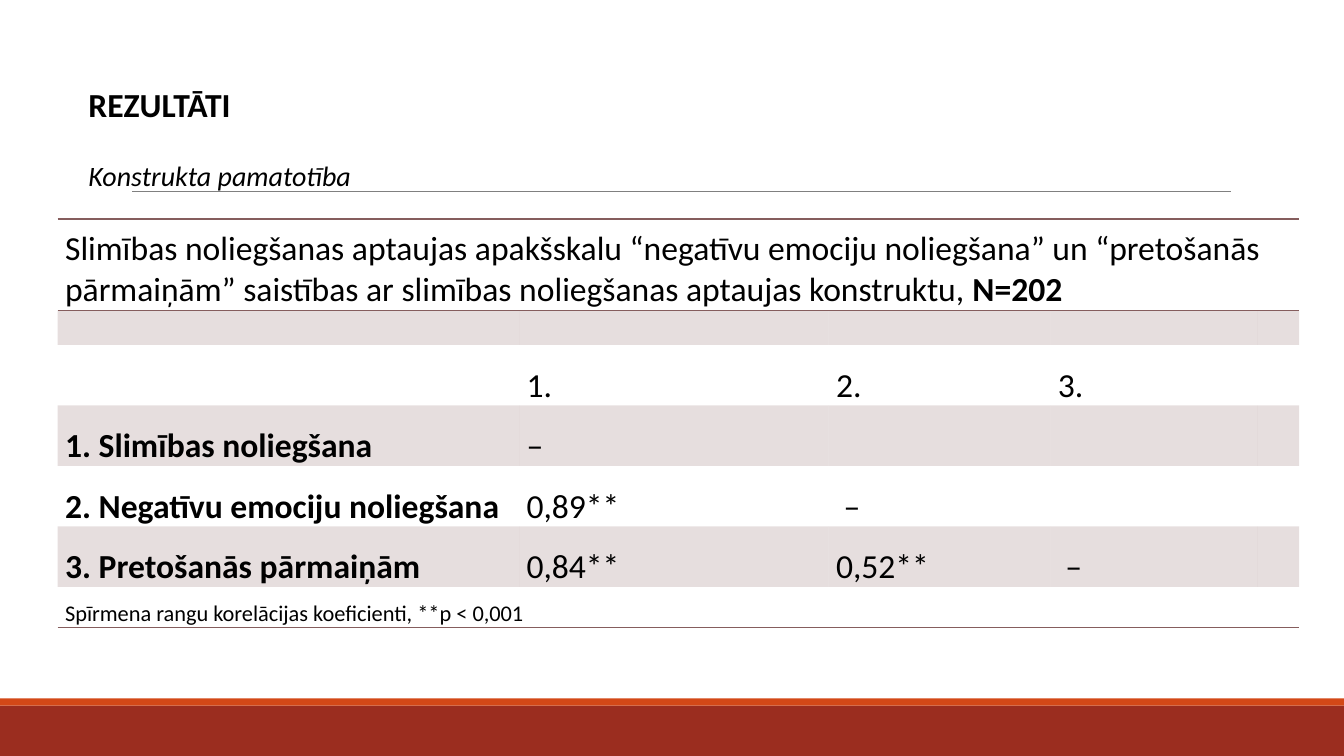
from dataclasses import dataclass

from lxml import etree
from pptx import Presentation
from pptx.dml.color import RGBColor
from pptx.enum.shapes import MSO_CONNECTOR, MSO_SHAPE
from pptx.enum.text import MSO_ANCHOR
from pptx.oxml.ns import qn
from pptx.util import Cm, Pt

RECTANGLE = MSO_SHAPE.RECTANGLE
STRAIGHT = MSO_CONNECTOR.STRAIGHT
BOTTOM = MSO_ANCHOR.BOTTOM

FONT = "Calibri"
COLORS = {
    "text": "000000",
    "rust": "9B2D1F",
    "orange": "D34817",
    "rule": "808080",
    "mauve": "855D5D",
}
PLAIN_TABLE_STYLE = "{2D5ABB26-0587-4C30-8999-92F81FD0307C}"
BAND_OPACITY = 20


@dataclass
class Bar:
    top: float
    height: float
    color: str


@dataclass
class TextLine:
    text: str
    size: int
    bold: bool = False
    italic: bool = False
    space_before: float = 0


BARS = [Bar(17.78, 1.27, "rust"), Bar(17.6, 0.18, "orange")]
TITLE_LINES = [
    TextLine("REZULTĀTI", 24, bold=True),
    TextLine("Konstrukta pamatotība", 20, italic=True, space_before=24.4),
]
COLUMN_WIDTHS = [11.63, 7.8, 5.59, 5.23, 1.04]
ROW_HEIGHTS = [2.31, 0.86, 1.42, 1.42, 1.42, 1.42, 0.94]
CAPTION = (
    "Slimības noliegšanas aptaujas apakšskalu “negatīvu emociju noliegšana” "
    "un “pretošanās pārmaiņām” saistības ar slimības noliegšanas aptaujas konstruktu, "
)
SAMPLE_SIZE = "N=202"
FOOTNOTE = "Spīrmena rangu korelācijas koeficienti, **p < 0,001"
CORRELATIONS = [
    ["", "1.", "2.", "3.", ""],
    ["1. Slimības noliegšana", "–", "", "", ""],
    ["2. Negatīvu emociju noliegšana", "0,89**", " –", "", ""],
    ["3. Pretošanās pārmaiņām", "0,84**", "0,52**", " –", ""],
]
FIRST_DATA_ROW = 2
BANDED_ROWS = (1, 3, 5)


def rgb(name: str) -> RGBColor:
    return RGBColor.from_string(COLORS[name])


def set_font(paragraph, size: float, bold: bool | None = False, italic: bool = False) -> None:
    font = paragraph.font
    font.name, font.size = FONT, Pt(size)
    font.bold, font.italic = bold, italic
    font.color.rgb = rgb("text")


def draw_bar(slide, bar: Bar, width: int) -> None:
    shape = slide.shapes.add_shape(RECTANGLE, 0, Cm(bar.top), width, Cm(bar.height))
    shape.shadow.inherit = False
    shape.fill.solid()
    shape.fill.fore_color.rgb = rgb(bar.color)
    shape.line.fill.background()


def draw_rule(slide) -> None:
    rule = slide.shapes.add_connector(STRAIGHT, Cm(3.33), Cm(4.83), Cm(31.01), Cm(4.83))
    rule.line.color.rgb = rgb("rule")
    rule.line.width = Pt(0.5)
    etree.SubElement(rule._element.spPr, qn("a:effectLst"))


def draw_title(slide) -> None:
    box = slide.shapes.add_textbox(Cm(1.98), Cm(1.98), Cm(23.95), Cm(3))
    frame = box.text_frame
    frame.word_wrap = True
    for index, line in enumerate(TITLE_LINES):
        paragraph = frame.add_paragraph() if index else frame.paragraphs[0]
        paragraph.text = line.text
        paragraph.space_before = Pt(line.space_before)
        set_font(paragraph, line.size, line.bold, line.italic)


def write_cell(cell, text: str, size: float = 24, bold: bool | None = False,
               line_spacing: float = 1.5):
    paragraph = cell.text_frame.paragraphs[0]
    paragraph.add_run().text = text
    paragraph.line_spacing = line_spacing
    paragraph.space_after = Pt(8)
    set_font(paragraph, size, bold)
    return paragraph


def add_border(cell, side: str) -> None:
    line = etree.Element(qn(f"a:{side}"), w=str(Pt(1)))
    fill = etree.SubElement(line, qn("a:solidFill"))
    etree.SubElement(fill, qn("a:srgbClr"), val=COLORS["mauve"])
    properties = cell._tc.get_or_add_tcPr()
    position = len(properties.findall(qn("a:lnT")))
    properties.insert(position, line)


def fill_band(cell) -> None:
    cell.fill.solid()
    cell.fill.fore_color.rgb = rgb("mauve")
    color = cell._tc.tcPr.find(f".//{qn('a:srgbClr')}")
    etree.SubElement(color, qn("a:alpha"), val=str(BAND_OPACITY * 1000))


def draw_table(slide) -> None:
    row_count, column_count = len(ROW_HEIGHTS), len(COLUMN_WIDTHS)
    frame = slide.shapes.add_table(
        row_count, column_count, Cm(1.45), Cm(5.52),
        Cm(sum(COLUMN_WIDTHS)), Cm(sum(ROW_HEIGHTS)))
    table = frame.table
    table.first_row = table.horz_banding = False
    table._tbl.tblPr.find(qn("a:tableStyleId")).text = PLAIN_TABLE_STYLE
    for column, width in zip(table.columns, COLUMN_WIDTHS):
        column.width = Cm(width)

    # Cell frames, bands and borders
    for row_index, height in enumerate(ROW_HEIGHTS):
        table.rows[row_index].height = Cm(height)
        for cell in table.rows[row_index].cells:
            cell.vertical_anchor = BOTTOM
            cell.margin_left = cell.margin_right = Cm(0.19)
            cell.margin_top = cell.margin_bottom = 0
            if row_index in BANDED_ROWS:
                fill_band(cell)
            else:
                cell.fill.background()
            if row_index == 0:
                add_border(cell, "lnT")
            if row_index in (0, row_count - 1):
                add_border(cell, "lnB")

    # Caption and footnote span several columns
    caption, footnote = table.cell(0, 0), table.cell(row_count - 1, 0)
    caption.merge(table.cell(0, column_count - 1))
    footnote.merge(table.cell(row_count - 1, column_count - 2))
    sample_size = write_cell(caption, CAPTION, bold=None, line_spacing=1).add_run()
    sample_size.text = SAMPLE_SIZE
    sample_size.font.bold = True
    write_cell(footnote, FOOTNOTE, size=16)

    # Correlation matrix
    for row_index, values in enumerate(CORRELATIONS, FIRST_DATA_ROW):
        for column_index, text in enumerate(values):
            if text:
                write_cell(table.cell(row_index, column_index), text, bold=column_index == 0)


def main() -> None:
    presentation = Presentation()
    presentation.slide_width, presentation.slide_height = Cm(33.87), Cm(19.05)
    slide = presentation.slides.add_slide(presentation.slide_layouts[6])
    for bar in BARS:
        draw_bar(slide, bar, presentation.slide_width)
    draw_rule(slide)
    draw_title(slide)
    draw_table(slide)
    presentation.save("out.pptx")


if __name__ == "__main__":
    main()
